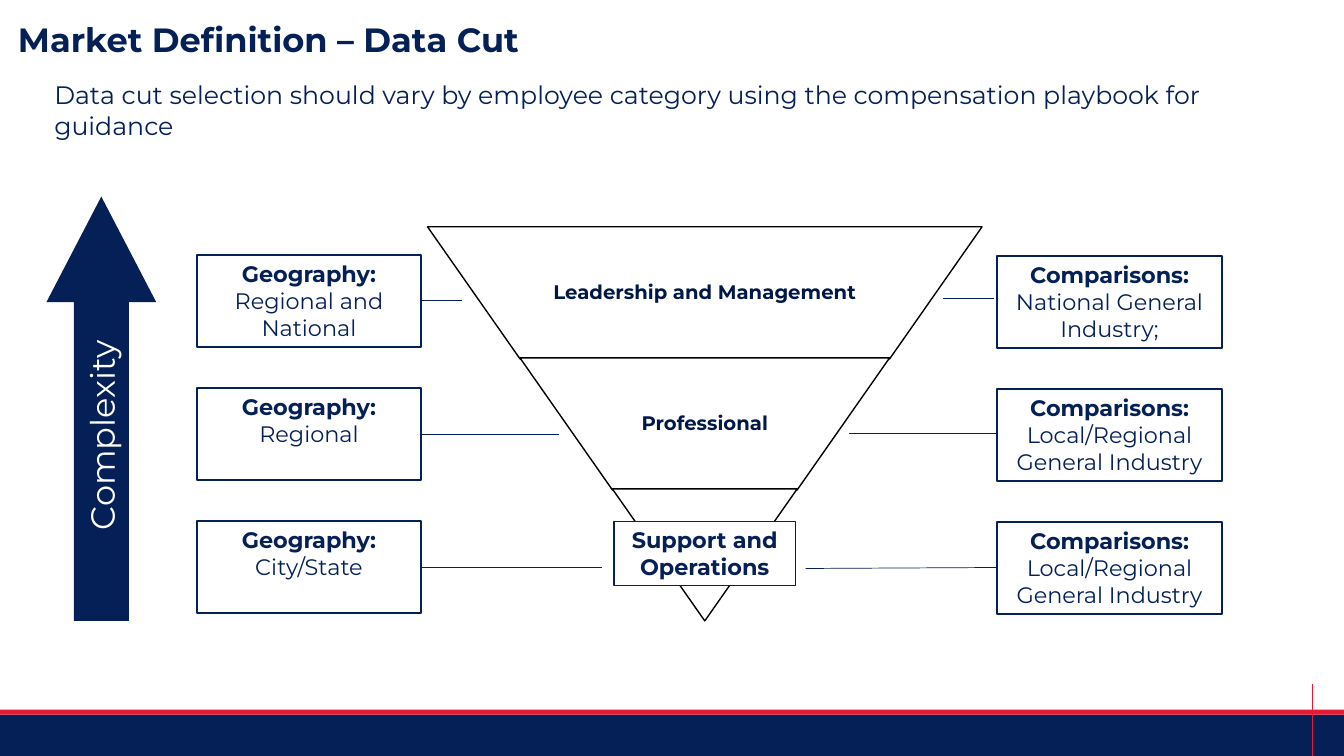
from lxml import etree
from pptx import Presentation
from pptx.dml.color import RGBColor
from pptx.enum.shapes import MSO_CONNECTOR, MSO_SHAPE
from pptx.enum.text import MSO_ANCHOR, PP_ALIGN
from pptx.oxml.ns import qn
from pptx.util import Inches, Pt

NAVY = RGBColor(0x05, 0x20, 0x57)
DARK_NAVY = RGBColor(0x00, 0x18, 0x47)
RED = RGBColor(0xE6, 0x19, 0x37)
WHITE = RGBColor(0xFF, 0xFF, 0xFF)
BLACK = RGBColor(0x00, 0x00, 0x00)
FONT = "Montserrat"

TIER_CENTER, TIER_TOP, TIER_STEP, TIER_HEIGHT = 6.99, 2.25, 1.3, 1.31
TIER_WIDTHS = [5.5 * share / 3 for share in (3, 2, 1)]
TIER_LABELS = [("Leadership and Management", 3.57), ("Professional", 2.38)]

ROW_STEP = 1.32
BOX_WIDTH, BOX_HEIGHT = 2.23, 0.91
GEOGRAPHY_LEFT, GEOGRAPHY_TOP = 1.95, 2.53
COMPARISON_LEFT, COMPARISON_TOP = 9.89, 2.54
# Per row: geography, end of its line, comparison, start and end of its line
ROWS = [
    ("Regional and National", 4.58, "National General Industry;", (9.35, 2.96), (9.86, 2.96)),
    ("Regional", 5.54, "Local/Regional General Industry", (8.42, 4.3), (9.88, 4.3)),
    ("City/State", 5.97, "Local/Regional General Industry", (7.99, 5.64), (9.88, 5.63)),
]


def add_block(slide, kind, left, top, width, height, fill=None, line=None, line_width=1):
    block = slide.shapes.add_shape(
        kind, Inches(left), Inches(top), Inches(width), Inches(height))
    block.shadow.inherit = False
    if fill is None:
        block.fill.background()
    else:
        block.fill.solid()
        block.fill.fore_color.rgb = fill
    if line is None:
        block.line.fill.background()
    else:
        block.line.color.rgb = line
        block.line.width = Pt(line_width)
    return block


def add_line(slide, start, end, color=NAVY):
    line = slide.shapes.add_connector(
        MSO_CONNECTOR.STRAIGHT, *(Inches(value) for value in (*start, *end)))
    line.line.color.rgb = color
    line.line.width = Pt(0.5)
    etree.SubElement(line._element.spPr, qn("a:effectLst"))


def write(frame, paragraphs, size, color=NAVY, align=PP_ALIGN.CENTER,
          anchor=MSO_ANCHOR.TOP, wrap=True):
    """Fill a text frame from (text, bold) pairs, one paragraph each."""
    frame.word_wrap = wrap
    frame.vertical_anchor = anchor
    for index, (text, bold) in enumerate(paragraphs):
        paragraph = frame.add_paragraph() if index else frame.paragraphs[0]
        paragraph.alignment = align
        run = paragraph.add_run()
        run.text = text
        run.font.name = FONT
        run.font.size = Pt(size)
        run.font.bold = bold
        run.font.color.rgb = color


def add_text(slide, left, top, width, height, text, size, bold=False, **options):
    box = slide.shapes.add_textbox(
        Inches(left), Inches(top), Inches(width), Inches(height))
    write(box.text_frame, [(text, bold)], size, **options)
    return box.text_frame


def add_footer(slide):
    add_block(slide, MSO_SHAPE.RECTANGLE, 0, 7.09, 13.33, 0.41, NAVY)
    add_line(slide, (13.02, 6.79), (13.02, 7.5), RED)
    add_block(slide, MSO_SHAPE.RECTANGLE, 0, 7.04, 13.33, 0.05, RED)


def add_pyramid(slide):
    for index, width in enumerate(TIER_WIDTHS):
        tier = add_block(slide, MSO_SHAPE.TRAPEZOID, TIER_CENTER - width / 2,
                         TIER_TOP + index * TIER_STEP, width, TIER_HEIGHT, WHITE, BLACK)
        tier.adjustments[0] = 0.7
        tier.rotation = 180
    for index, (label, width) in enumerate(TIER_LABELS):
        frame = add_text(slide, TIER_CENTER - width / 2, TIER_TOP + index * TIER_STEP,
                         width, TIER_HEIGHT, label, 14, True,
                         color=DARK_NAVY, anchor=MSO_ANCHOR.MIDDLE)
        frame.paragraphs[0].line_spacing = 0.9
        frame.margin_left = frame.margin_right = Inches(0.02)
        frame.margin_top = frame.margin_bottom = Inches(0.02)
    support = add_block(slide, MSO_SHAPE.RECTANGLE, 6.09, 5.17, 1.8, 0.64, WHITE, NAVY, 0.75)
    write(support.text_frame, [("Support and", True), ("Operations", True)], 16)


def add_detail_box(slide, left, top, heading, detail):
    box = add_block(slide, MSO_SHAPE.RECTANGLE, left, top, BOX_WIDTH, BOX_HEIGHT,
                    line=NAVY, line_width=1.5)
    write(box.text_frame, [(heading, True), (detail, False)], 16)


def add_rows(slide):
    for index, (geography, line_end, comparison, start, end) in enumerate(ROWS):
        offset = index * ROW_STEP
        line_top = GEOGRAPHY_TOP + offset + BOX_HEIGHT / 2
        add_line(slide, (GEOGRAPHY_LEFT + BOX_WIDTH, line_top), (line_end, line_top))
        add_line(slide, start, end)
        add_detail_box(slide, GEOGRAPHY_LEFT, GEOGRAPHY_TOP + offset,
                       "Geography:", geography)
        add_detail_box(slide, COMPARISON_LEFT, COMPARISON_TOP + offset,
                       "Comparisons:", comparison)


def add_complexity_arrow(slide):
    arrow = add_block(slide, MSO_SHAPE.UP_ARROW, 0.46, 1.95, 1.09, 4.21, NAVY)
    arrow.adjustments[0] = 0.5
    arrow.adjustments[1] = 0.962
    write(arrow.text_frame, [("Complexity", False)], 24, WHITE, anchor=MSO_ANCHOR.MIDDLE)
    arrow.text_frame._txBody.bodyPr.set("vert", "vert270")


def main():
    deck = Presentation()
    deck.slide_width, deck.slide_height = Inches(13.33), Inches(7.5)
    slide = deck.slides.add_slide(deck.slide_layouts[6])
    add_footer(slide)
    add_text(slide, 0.08, 0.14, 5.24, 0.5, "Market Definition – Data Cut", 24, True,
             align=PP_ALIGN.LEFT, wrap=False)
    add_text(slide, 0.44, 0.74, 12, 0.82,
             "Data cut selection should vary by employee category using the "
             "compensation playbook for guidance", 18, align=PP_ALIGN.LEFT)
    add_pyramid(slide)
    add_rows(slide)
    add_complexity_arrow(slide)
    deck.save("out.pptx")


if __name__ == "__main__":
    main()
